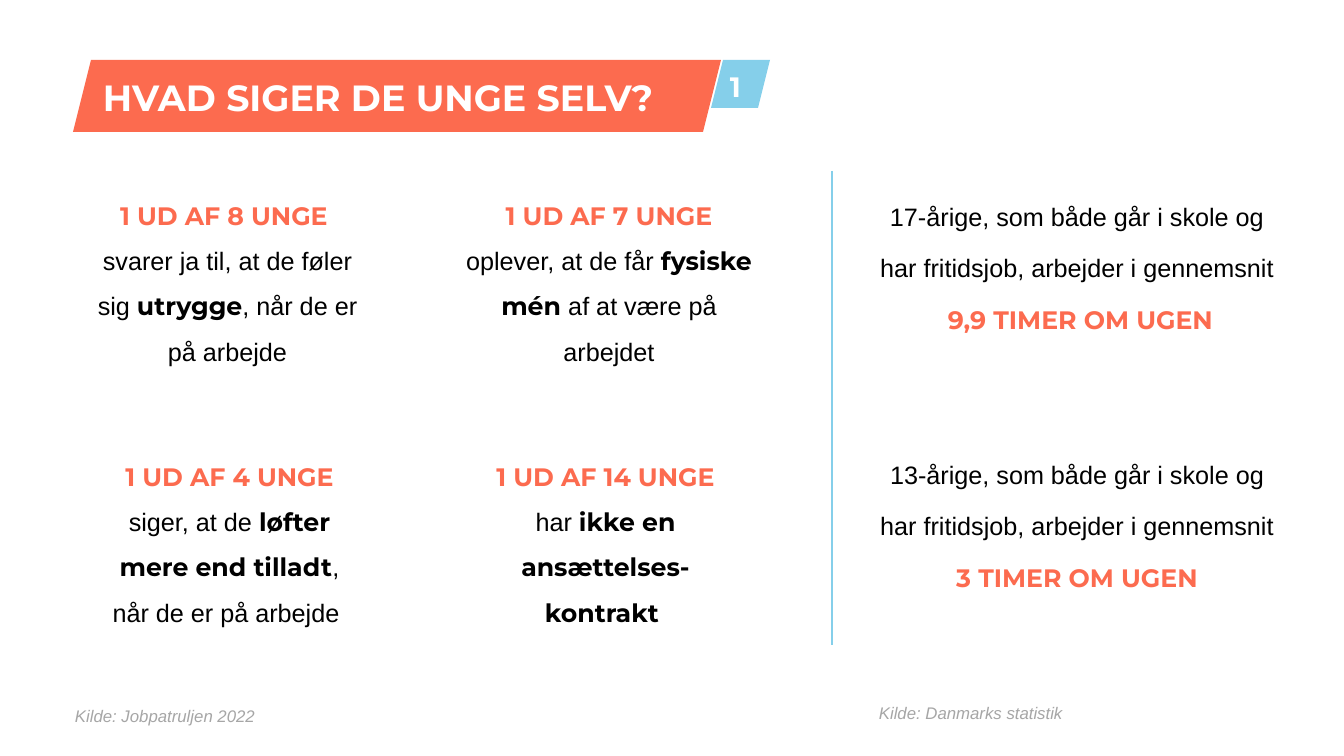
from pptx import Presentation
from pptx.dml.color import RGBColor
from pptx.enum.shapes import MSO_CONNECTOR as Connector, MSO_SHAPE as Shape
from pptx.enum.text import MSO_ANCHOR as Anchor, PP_ALIGN as Align
from pptx.oxml.ns import qn
from pptx.util import Pt
from lxml.etree import SubElement

CORAL = RGBColor(0xFC, 0x6B, 0x4F)
SKY = RGBColor(0x85, 0xCF, 0xEA)
BLACK = RGBColor(0, 0, 0)
WHITE = RGBColor(255, 255, 255)
GREY = RGBColor(0xA6, 0xA6, 0xA6)

STYLES = {
    "title": dict(name="Montserrat", size=26, color=WHITE, bold=True),
    "number": dict(name="Montserrat", size=20, color=WHITE, bold=True),
    "key": dict(name="Montserrat", size=18, color=CORAL, bold=True),
    "strong": dict(name="Montserrat", size=18, color=BLACK, bold=True),
    "plain": dict(name="Arial", size=18, color=BLACK),
    "source": dict(name="Arial", size=12, color=GREY, italic=True),
}

BANNERS = [
    ((73, 60, 648, 72), CORAL),
    ((711, 60, 59, 48), SKY),
]
HEADINGS = [
    ((93, 60, 869, 80), "title", "HVAD SIGER DE UNGE SELV?", Anchor.MIDDLE),
    ((720, 68, 46, 40), "number", "1", Anchor.TOP),
]
SURVEY = [
    ((76, 180, 303, 187), [
        ("key", "1 UD AF 8 UNGE \n"),
        ("plain", "svarer ja til, at de føler sig "),
        ("strong", "utrygge"),
        ("plain", ", når de er på arbejde"),
    ]),
    ((449, 180, 320, 187), [
        ("key", "1 UD AF 7 UNGE "),
        ("plain", "oplever, at de får "),
        ("strong", "fysiske mén "),
        ("plain", "af at være på arbejdet"),
    ]),
    ((93, 441, 273, 187), [
        ("key", "1 UD AF 4 UNGE\n"),
        ("plain", "siger, at de "),
        ("strong", "løfter mere end tilladt"),
        ("plain", ", når de er på arbejde "),
    ]),
    ((469, 441, 273, 187), [
        ("key", "1 UD AF 14 UNGE\n"),
        ("plain", "har "),
        ("strong", "ikke en ansættelses-\nkontrakt "),
    ]),
]
HOURS = [
    ((825, 175, 511, 187), [
        ("plain", "17-årige, som både går i skole og \nhar fritidsjob, arbejder i gennemsnit \n"),
        ("key", "9,9 TIMER OM UGEN"),
    ]),
    ((869, 433, 416, 159), [
        ("plain", "13-årige, som både går i skole og har fritidsjob, arbejder i gennemsnit "),
        ("key", "3 TIMER OM UGEN"),
    ]),
]
SOURCES = [
    ((869, 698, 212, 30), "Kilde: Danmarks statistik"),
    ((65, 701, 212, 30), "Kilde: Jobpatruljen 2022"),
]
DIVIDER = (832, 171, 832, 645)


def px(*lengths):
    return [round(length * 914400 / 100.8) for length in lengths]


def add_text(slide, place, pieces, align=Align.LEFT, spacing=1.0, anchor=Anchor.TOP):
    frame = slide.shapes.add_textbox(*px(*place)).text_frame
    frame.word_wrap = True
    frame.vertical_anchor = anchor
    paragraph = frame.paragraphs[0]
    paragraph.alignment = align
    paragraph.line_spacing = spacing
    for style_name, words in pieces:
        style = STYLES[style_name]
        for index, line in enumerate(words.split("\n")):
            if index:
                paragraph.add_line_break()
            if not line:
                continue
            run = paragraph.add_run()
            run.text = line
            run.font.name = style["name"]
            run.font.size = Pt(style["size"])
            run.font.color.rgb = style["color"]
            run.font.bold = style.get("bold", False)
            run.font.italic = style.get("italic", False)


def add_banner(slide, place, color):
    banner = slide.shapes.add_shape(Shape.PARALLELOGRAM, *px(*place))
    banner.shadow.inherit = False
    banner.fill.solid()
    banner.fill.fore_color.rgb = color
    banner.line.fill.background()


def add_divider(slide):
    divider = slide.shapes.add_connector(Connector.STRAIGHT, *px(*DIVIDER))
    divider.line.color.rgb = SKY
    divider.line.width = Pt(2)
    SubElement(divider._element.spPr, qn("a:effectLst"))


def main():
    deck = Presentation()
    deck.slide_width, deck.slide_height = px(1344, 756)
    slide = deck.slides.add_slide(deck.slide_layouts[6])
    for place, color in BANNERS:
        add_banner(slide, place, color)
    for place, style_name, words, anchor in HEADINGS:
        add_text(slide, place, [(style_name, words)], spacing=0.9, anchor=anchor)
    for facts, spacing in ((SURVEY, 1.5), (HOURS, 1.7)):
        for place, pieces in facts:
            add_text(slide, place, pieces, Align.CENTER, spacing)
    add_divider(slide)
    for place, words in SOURCES:
        add_text(slide, place, [("source", words)])
    deck.save("out.pptx")


if __name__ == "__main__":
    main()
